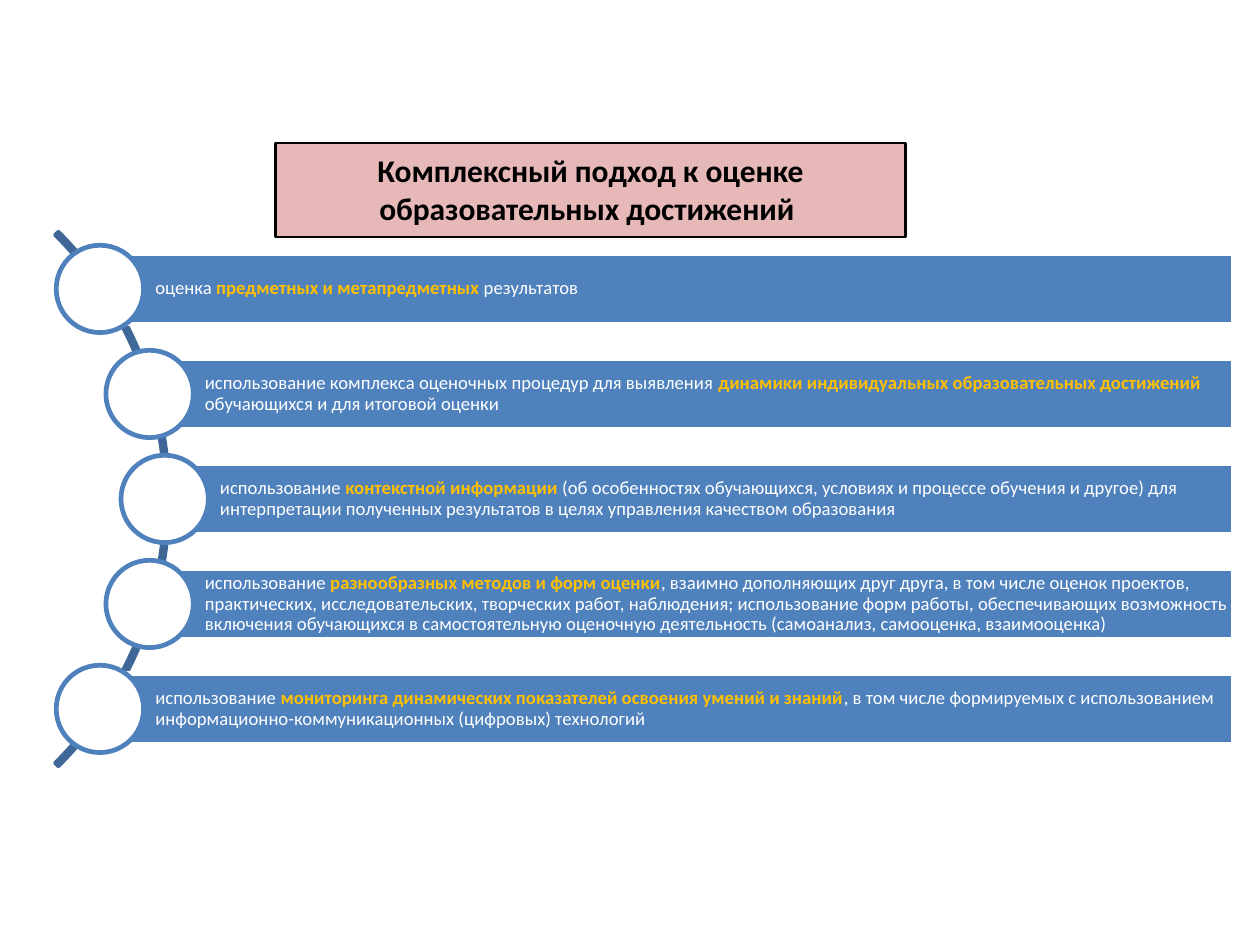
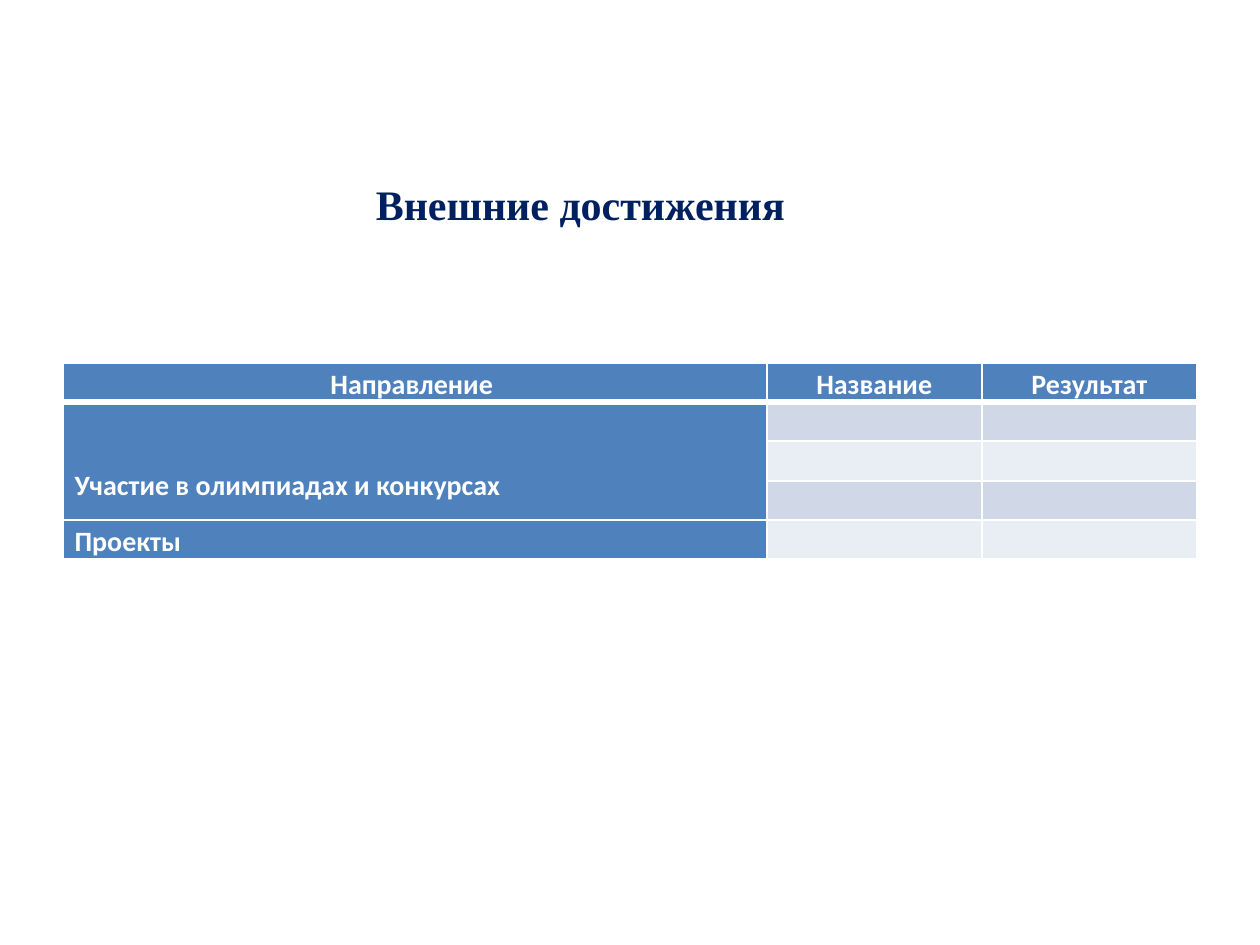
import pptx
import pptx.dml.color
import pptx.enum.shapes
import pptx.enum.text
import pptx.util
import lxml.etree
import math

Inches = pptx.util.Inches
Pt = pptx.util.Pt
SHAPE = pptx.enum.shapes.MSO_SHAPE
ALIGN = pptx.enum.text.PP_ALIGN
ANCHOR = pptx.enum.text.MSO_ANCHOR
DRAWING = "{http://schemas.openxmlformats.org/drawingml/2006/main}"

WHITE, BLACK = "FFFFFF", "000000"
BLUE, ARC_BLUE, NAVY = "4F81BD", "3F6797", "002060"
PINK, GOLD = "E6B9B8", "FFC000"
BANDS = ("E9EDF4", "D0D8E8")


def write_text(frame, *texts, size, color=WHITE, bold=False, font="Calibri",
               align=ALIGN.LEFT, spacing=1.0, margins=(0.1, 0.05, 0.1, 0.05),
               anchor=ANCHOR.TOP):
    frame.word_wrap = True
    frame.vertical_anchor = anchor
    (frame.margin_left, frame.margin_top,
     frame.margin_right, frame.margin_bottom) = map(Inches, margins)
    paragraph = frame.paragraphs[0]
    paragraph.alignment = align
    paragraph.line_spacing = spacing
    for index, text in enumerate(texts):
        highlighted = index % 2 == 1
        run = paragraph.add_run()
        run.text = text
        run.font.name = font
        run.font.size = Pt(size)
        run.font.bold = bold or highlighted
        run.font.color.rgb = pptx.dml.color.RGBColor.from_string(GOLD if highlighted else color)


def add_shape(slide, kind, left, top, width, height, fill, line, line_width=2):
    shape = slide.shapes.add_shape(kind, Inches(left), Inches(top), Inches(width), Inches(height))
    shape.shadow.inherit = False
    shape.fill.solid()
    shape.fill.fore_color.rgb = pptx.dml.color.RGBColor.from_string(fill)
    shape.line.color.rgb = pptx.dml.color.RGBColor.from_string(line)
    shape.line.width = Pt(line_width)
    return shape


slide_width = 7.5
presentation = pptx.Presentation()
presentation.slide_width = Inches(slide_width)
presentation.slide_height = Inches(slide_width * 3 / 4)
blank_layout = presentation.slide_layouts[6]

slide = presentation.slides.add_slide(blank_layout)
title = add_shape(slide, SHAPE.RECTANGLE, 1.64, 0.85, 3.75, 0.56, PINK, BLACK, 1)
write_text(title.text_frame, "Комплексный подход к оценке образовательных достижений ",
           size=13.5, color=BLACK, bold=True, align=ALIGN.CENTER)

approaches = [
    ("оценка ", "предметных и метапредметных ", "результатов"),
    ("использование комплекса оценочных процедур для выявления ",
     "динамики индивидуальных образовательных достижений ",
     "обучающихся и для итоговой оценки"),
    ("использование ", "контекстной информации ",
     "(об особенностях обучающихся, условиях и процессе обучения и другое) для "
     "интерпретации полученных результатов в целях управления качеством образования"),
    ("использование ", "разнообразных методов и форм оценки",
     ", взаимно дополняющих друг друга, в том числе оценок проектов, практических, "
     "исследовательских, творческих работ, наблюдения; использование форм работы, "
     "обеспечивающих возможность включения обучающихся в самостоятельную оценочную "
     "деятельность (самоанализ, самооценка, взаимооценка)"),
    ("использование ", "мониторинга динамических показателей освоения умений и знаний",
     ", в том числе формируемых с использованием информационно-коммуникационных "
     "(цифровых) технологий"),
]
arc_size, arc_x, arc_y, arc_radius = 4.49, -1.24, 2.97, 2.22
bar_height, bar_right, bar_step, circle_size = 0.42, 7.34, 5 / 8, 0.52

arc = add_shape(slide, SHAPE.BLOCK_ARC, arc_x - arc_size / 2, arc_y - arc_size / 2,
                arc_size, arc_size, ARC_BLUE, ARC_BLUE)
for index, value in enumerate((189, 27, 0.005)):
    arc.adjustments[index] = value

for index, texts in enumerate(approaches):
    offset = (index - 2) * bar_step
    center_x = arc_x + math.sqrt(arc_radius ** 2 - offset ** 2)
    center_y = arc_y + offset
    bar = add_shape(slide, SHAPE.RECTANGLE, center_x, center_y - bar_height / 2,
                    bar_right - center_x, bar_height, BLUE, WHITE)
    write_text(bar.text_frame, *texts, size=8, spacing=0.9,
               margins=(0.33, 0.02, 0.02, 0.02), anchor=ANCHOR.MIDDLE)
    add_shape(slide, SHAPE.OVAL, center_x - circle_size / 2, center_y - circle_size / 2,
              circle_size, circle_size, WHITE, BLUE)

slide = presentation.slides.add_slide(blank_layout)
rows = [
    ("Направление ", "Название", "Результат"),
    ("Участие в олимпиадах и конкурсах", "", ""),
    ("", "", ""),
    ("", "", ""),
    ("Проекты", "", ""),
]
column_widths = (4.19, 1.28, 1.28)
table_width, table_height = sum(column_widths), 1.17
table = slide.shapes.add_table(len(rows), len(column_widths),
                               Inches((slide_width - table_width) / 2), Inches(2.16),
                               Inches(table_width), Inches(table_height)).table
for column, width in zip(table.columns, column_widths):
    column.width = Inches(width)

for row_index, texts in enumerate(rows):
    table.rows[row_index].height = Inches(table_height / len(rows))
    for column_index, text in enumerate(texts):
        cell = table.cell(row_index, column_index)
        top_margin = 0.37 if (row_index, column_index) == (1, 0) else 0
        cell.margin_left = cell.margin_right = Inches(0.07)
        cell.margin_top, cell.margin_bottom = Inches(top_margin), 0
        properties = cell._tc.get_or_add_tcPr()
        widths = {"lnL": 1, "lnR": 1, "lnT": 3 if row_index == 1 else 1,
                  "lnB": 3 if row_index == 0 else 1}
        for side, width in widths.items():
            border = lxml.etree.SubElement(properties, DRAWING + side, w=str(Pt(width)))
            border_fill = lxml.etree.SubElement(border, DRAWING + "solidFill")
            lxml.etree.SubElement(border_fill, DRAWING + "srgbClr", val=WHITE)
        is_heading = row_index == 0 or column_index == 0
        cell.fill.solid()
        cell.fill.fore_color.rgb = pptx.dml.color.RGBColor.from_string(
            BLUE if is_heading else BANDS[row_index % 2])
        if text:
            write_text(cell.text_frame, text, size=12, bold=True, spacing=1.15,
                       align=ALIGN.CENTER if row_index == 0 else ALIGN.LEFT,
                       margins=(0.07, top_margin, 0.07, 0))
        else:
            paragraph = cell.text_frame.paragraphs[0]
            lxml.etree.SubElement(paragraph._p, DRAWING + "endParaRPr", sz="1200")
table.cell(1, 0).merge(table.cell(3, 0))

heading = slide.shapes.add_textbox(Inches(1.58), Inches(0.97), Inches(3.75), Inches(0.43))
write_text(heading.text_frame, "Внешние достижения", size=18, color=NAVY, bold=True,
           font="Times New Roman", align=ALIGN.CENTER, spacing=1.15)

presentation.save("out.pptx")
